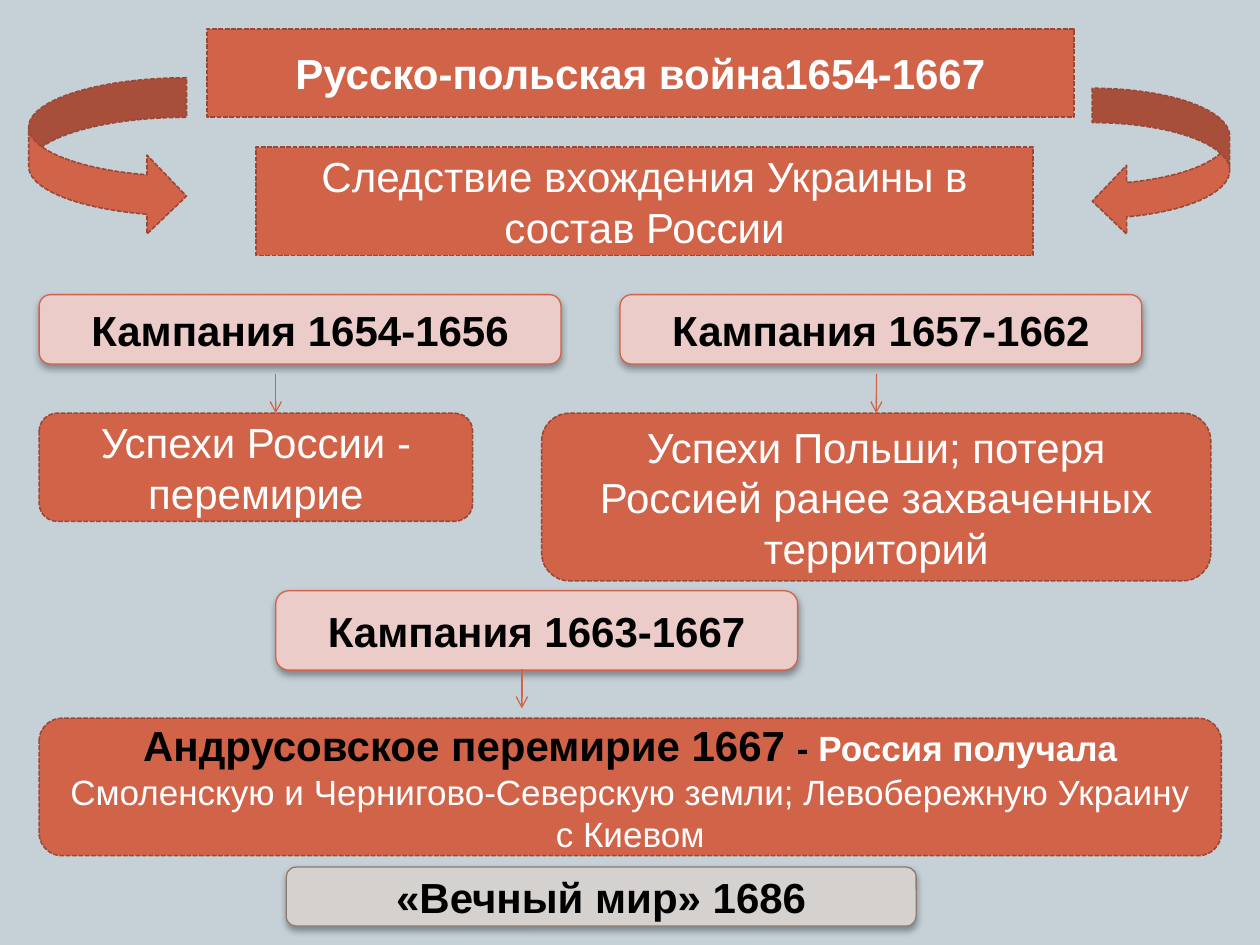
from dataclasses import dataclass

from lxml.etree import SubElement
from pptx import Presentation
from pptx.dml.color import RGBColor
from pptx.enum.dml import MSO_LINE
from pptx.enum.shapes import MSO_CONNECTOR, MSO_SHAPE
from pptx.enum.text import MSO_ANCHOR, MSO_AUTO_SIZE, PP_ALIGN
from pptx.oxml.ns import qn
from pptx.util import Cm, Pt


@dataclass(frozen=True)
class Theme:
    """Colours and type sizes of the deck."""
    font: str = "Arial"
    background: str = "C5D1D7"
    accent: str = "D16349"
    accent_edge: str = "9B4936"
    campaign: str = "ECCCC9"
    peace: str = "D5D1CF"
    peace_edge: str = "8C7B70"
    light: str = "FFFFFF"
    dark: str = "000000"
    large: int = 24
    small: int = 20
    thin: float = 0.75
    dashed: float = 0.9


@dataclass(frozen=True)
class Box:
    """A rectangle measured in centimetres."""
    left: float
    top: float
    width: float
    height: float

    def inner(self, left, top, width, height):
        """Return a box placed relative to this one."""
        return Box(self.left + left, self.top + top, width, height)

    def frame(self):
        """Return the position and size as lengths."""
        return [Cm(value) for value in (self.left, self.top, self.width, self.height)]


THEME = Theme()
DASHED = {"fill": THEME.accent, "edge": THEME.accent_edge,
          "width": THEME.dashed, "dash": MSO_LINE.SQUARE_DOT}
RAISED = {"fill": THEME.campaign, "edge": THEME.accent, "width": THEME.thin, "raised": True}
PEACE = {**RAISED, "fill": THEME.peace, "edge": THEME.peace_edge}
PLAIN = {"size": Pt(THEME.large), "bold": False, "color": THEME.light}
STRONG = {**PLAIN, "bold": True}
HEADING = {**STRONG, "color": THEME.dark}


def style_shape(shape, style):
    """Apply fill, outline and shadow to a shape."""
    shape.fill.solid()
    shape.fill.fore_color.rgb = RGBColor.from_string(style["fill"])
    shape.line.color.rgb = RGBColor.from_string(style["edge"])
    shape.line.width = Pt(style["width"])
    if "dash" in style:
        shape.line.dash_style = style["dash"]
    shape.shadow.inherit = False
    if style.get("raised"):
        effects = shape.element.spPr.find(qn("a:effectLst"))
        shadow = SubElement(effects, qn("a:outerShdw"), blurRad=str(Pt(4)),
                            dist=str(Pt(2)), dir="5400000", rotWithShape="0")
        color = SubElement(shadow, qn("a:srgbClr"), val=THEME.dark)
        SubElement(color, qn("a:alpha"), val="35000")


def write_text(shape, *spans):
    """Write centred spans, each a text with its format values."""
    frame = shape.text_frame
    settings = {"word_wrap": True, "auto_size": MSO_AUTO_SIZE.NONE,
                "vertical_anchor": MSO_ANCHOR.MIDDLE}
    for name, value in settings.items():
        setattr(frame, name, value)
    para = frame.paragraphs[0]
    para.alignment = PP_ALIGN.CENTER
    for text, values in spans:
        span = para.add_run()
        span.text = text
        span.font.name = THEME.font
        for name, value in values.items():
            if name == "color":
                span.font.color.rgb = RGBColor.from_string(value)
            else:
                setattr(span.font, name, value)


def add_block(page, box, style, *spans, kind=MSO_SHAPE.ROUNDED_RECTANGLE):
    """Add a styled shape holding the given spans."""
    shape = page.shapes.add_shape(kind, *box.frame())
    style_shape(shape, style)
    if spans:
        write_text(shape, *spans)
    return shape


def add_arrow(page, box, target=None):
    """Add a downward arrow along the left side of a box."""
    left, top, _, height = box.frame()
    arrow = page.shapes.add_connector(MSO_CONNECTOR.STRAIGHT, left, top, left, top + height)
    if target is not None:
        arrow.end_connect(target, 0)
    arrow.line.color.rgb = RGBColor.from_string(THEME.accent)
    arrow.line.width = Pt(THEME.thin)
    SubElement(arrow.line._get_or_add_ln(), qn("a:tailEnd"), type="arrow")
    SubElement(arrow.element.spPr, qn("a:effectLst"))


def add_title(page, box, text):
    """Turn the title placeholder into a rounded banner."""
    title = page.shapes.title
    names = ("left", "top", "width", "height")
    for name, value in zip(names, box.frame()):
        setattr(title, name, value)
    outline = SubElement(title.element.spPr, qn("a:prstGeom"), prst="roundRect")
    SubElement(outline, qn("a:avLst"))
    style_shape(title, DASHED)
    write_text(title, (text, STRONG))


def add_header(page, box):
    """Place the title, the cause of the war and the curved arrows."""
    add_title(page, box.inner(3.59, 0, 17.48, 1.78), "Русско-польская война1654-1667")
    add_block(page, box.inner(4.58, 2.39, 15.67, 2.18), DASHED,
              ("Следствие вхождения Украины в состав России", PLAIN),
              kind=MSO_SHAPE.RECTANGLE)
    add_block(page, box.inner(0, 0.99, 3.18, 3.18), DASHED, kind=MSO_SHAPE.CURVED_RIGHT_ARROW)
    add_block(page, box.inner(21.44, 1.2, 2.77, 2.97), DASHED, kind=MSO_SHAPE.CURVED_LEFT_ARROW)


def add_campaign(page, box, years, heading, arrow, outcome_height, outcome, joined=False):
    """Place a campaign heading above its outcome, with an arrow between."""
    add_block(page, box.inner(*heading), RAISED, (f"Кампания {years}", HEADING))
    result = add_block(page, box.inner(0, box.height - outcome_height, box.width, outcome_height),
                       DASHED, *outcome)
    add_arrow(page, box.inner(*arrow), result if joined else None)


def add_peace(page, box):
    """Place the closing peace treaty."""
    add_block(page, box, PEACE, ("«Вечный мир» 1686", HEADING))


def main():
    """Build and save the slide."""
    deck = Presentation()
    deck.slide_width, deck.slide_height = Cm(25.4), Cm(19.05)
    page = deck.slides.add_slide(deck.slide_layouts[5])
    page.background.fill.solid()
    page.background.fill.fore_color.rgb = RGBColor.from_string(THEME.background)

    small = {"size": Pt(THEME.small)}
    treaty = (
        ("Андрусовское перемирие 1667 ", HEADING),
        ("- ", {**HEADING, **small}),
        ("Россия получала ", {**STRONG, **small}),
        ("Смоленскую и Чернигово-Северскую земли; Левобережную Украину с Киевом",
         {**PLAIN, **small}),
    )
    add_header(page, Box(0.58, 0.58, 24.21, 4.57))
    add_campaign(page, Box(0.79, 5.94, 8.74, 4.57), "1654-1656", (0, 0, 10.52, 1.4),
                 (4.77, 1.6, 0, 0.79), 2.18, [("Успехи России - перемирие", PLAIN)])
    add_campaign(page, Box(10.92, 5.94, 13.49, 5.77), "1657-1662", (1.58, 0, 10.52, 1.4),
                 (6.75, 1.6, 0, 0.79), 3.38,
                 [("Успехи Польши; потеря Россией ранее захваченных территорий", PLAIN)],
                 joined=True)
    add_campaign(page, Box(0.79, 11.91, 23.83, 5.34), "1663-1667", (4.77, 0, 10.52, 1.6),
                 (9.73, 1.58, 0, 0.79), 2.77, treaty)
    add_peace(page, Box(5.77, 17.48, 12.7, 1.19))
    deck.save("out.pptx")


if __name__ == "__main__":
    main()
